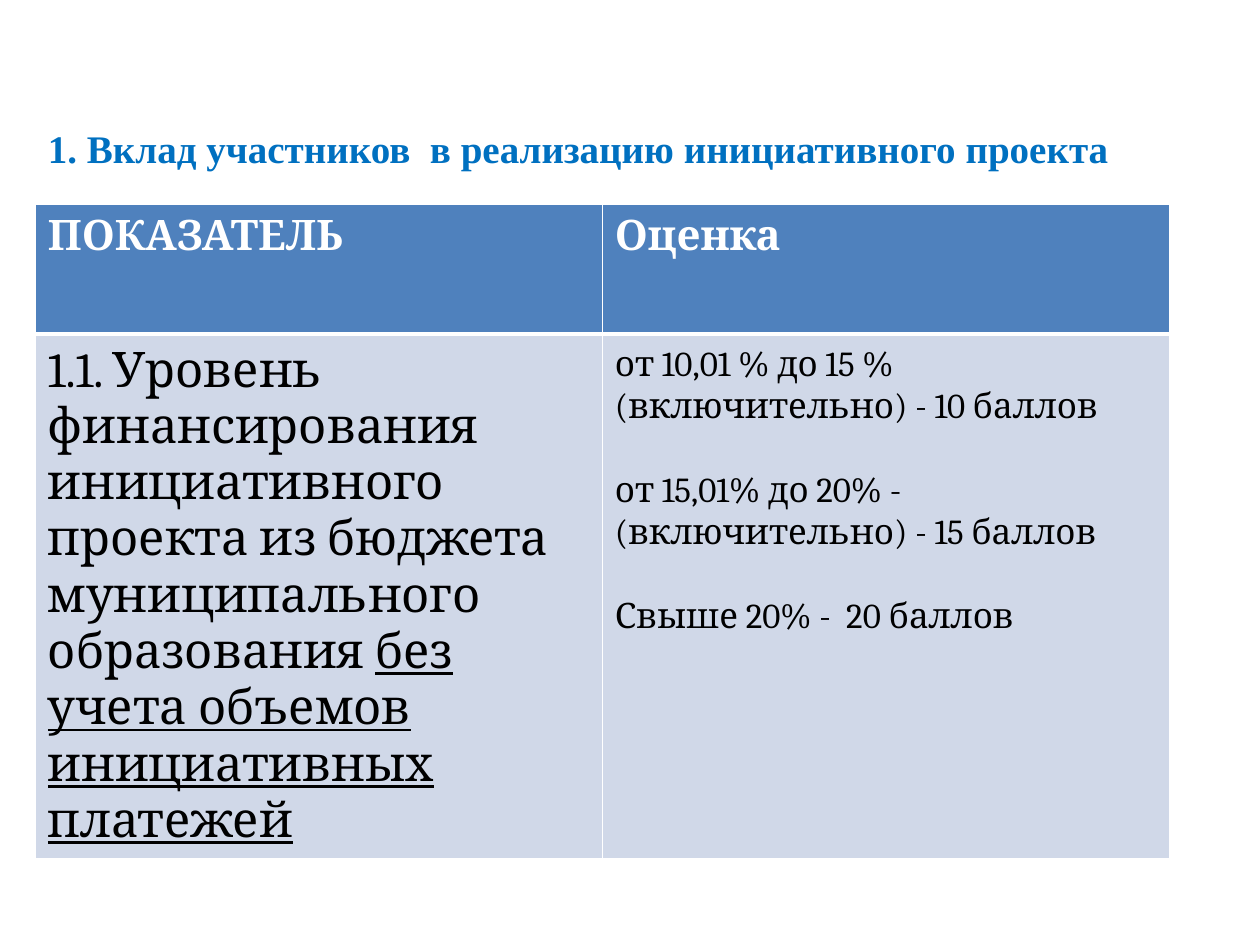
from dataclasses import dataclass

from lxml.etree import SubElement
from pptx import Presentation
from pptx.dml.color import RGBColor
from pptx.enum.text import MSO_ANCHOR, MSO_AUTO_SIZE, PP_ALIGN
from pptx.oxml.ns import qn
from pptx.util import Inches, Pt


@dataclass(frozen=True)
class Theme:
    title_font: str = "Times New Roman"
    body_font: str = "Cambria"
    title_color: str = "0070C0"
    header_fill: str = "4F81BD"
    body_fill: str = "D0D8E8"
    light: str = "FFFFFF"
    dark: str = "000000"
    title_size: float = 22.3
    header_size: float = 24
    indicator_size: float = 28
    score_size: float = 20
    score_leading: float = 24
    thin_border: float = 1
    header_border: float = 3


class SlideBuilder:
    def __init__(self, presentation, theme):
        self.theme = theme
        self.width = presentation.slide_width
        self.height = presentation.slide_height
        self.slide = presentation.slides.add_slide(presentation.slide_layouts[5])

    def box(self, left, top, width, height):
        """Turn shares of the slide's size into lengths."""
        return (int(left * self.width), int(top * self.height),
                int(width * self.width), int(height * self.height))

    def style(self, font, name, size, color, bold=False):
        font.name, font.size, font.bold = name, Pt(size), bold
        font.color.rgb = RGBColor.from_string(color)

    def title(self, text, area):
        shape = self.slide.shapes.title
        shape.left, shape.top, shape.width, shape.height = self.box(*area)
        frame = shape.text_frame
        frame.text = text
        frame.word_wrap = True
        frame.auto_size = MSO_AUTO_SIZE.NONE
        frame.vertical_anchor = MSO_ANCHOR.MIDDLE
        frame.margin_top, frame.margin_bottom = Inches(0.17), Inches(0.05)
        paragraph = frame.paragraphs[0]
        paragraph.alignment = PP_ALIGN.LEFT
        theme = self.theme
        self.style(paragraph.runs[0].font, theme.title_font, theme.title_size,
                   theme.title_color, bold=True)

    def table(self, area, columns, row_shares):
        box = self.box(*area)
        table = self.slide.shapes.add_table(len(row_shares), columns, *box).table
        for row, share in zip(table.rows, row_shares):
            row.height = int(share * box[3])
        return table

    def borders(self, cell, bottom):
        properties = cell._tc.get_or_add_tcPr()
        widths = dict.fromkeys(("lnL", "lnR", "lnT"), self.theme.thin_border)
        widths["lnB"] = bottom
        for side, width in widths.items():
            line = SubElement(properties, qn(f"a:{side}"), w=str(Pt(width)))
            fill = SubElement(line, qn("a:solidFill"))
            SubElement(fill, qn("a:srgbClr"), val=self.theme.light)

    def cell(self, cell, paragraphs, size, header=False, leading=None):
        """Fill a cell; a paragraph is a list of (text, underlined) pairs."""
        theme = self.theme
        self.borders(cell, theme.header_border if header else theme.thin_border)
        cell.fill.solid()
        cell.fill.fore_color.rgb = RGBColor.from_string(
            theme.header_fill if header else theme.body_fill)
        cell.margin_left = cell.margin_right = Inches(0.1)
        cell.margin_top = cell.margin_bottom = Inches(0.07)
        frame = cell.text_frame
        for index, pieces in enumerate(paragraphs):
            paragraph = frame.add_paragraph() if index else frame.paragraphs[0]
            if leading:
                paragraph.line_spacing = Pt(leading)
                paragraph.space_before = Pt(leading if index else 0)
            for text, underlined in pieces:
                run = paragraph.add_run()
                run.text = text
                self.style(run.font, theme.body_font, size,
                           theme.light if header else theme.dark, bold=header)
                run.font.underline = underlined


def main():
    presentation = Presentation()
    presentation.slide_width, presentation.slide_height = Inches(10), Inches(7.5)
    theme = Theme()
    builder = SlideBuilder(presentation, theme)

    # Title
    builder.title("1. Вклад участников  в реализацию инициативного проекта",
                  (0.028, 0.07, 0.9, 0.157))

    # Table frame and header row
    table = builder.table((0.028, 0.216, 0.9, 0.688), 2, (0.2, 0.8))
    for column, heading in enumerate(("ПОКАЗАТЕЛЬ", "Оценка")):
        builder.cell(table.cell(0, column), [[(heading, False)]],
                     theme.header_size, header=True)

    # Indicator and its scores
    indicator = [("1.1. Уровень финансирования инициативного проекта из бюджета "
                  "муниципального образования ", False),
                 ("без учета объемов инициативных платежей", True)]
    builder.cell(table.cell(1, 0), [indicator], theme.indicator_size)
    scores = ("от 10,01 % до 15 % (включительно) - 10 баллов",
              "от 15,01% до 20% - (включительно) - 15 баллов",
              "Свыше 20% -  20 баллов")
    builder.cell(table.cell(1, 1), [[(score, False)] for score in scores],
                 theme.score_size, leading=theme.score_leading)

    presentation.save("out.pptx")


if __name__ == "__main__":
    main()
